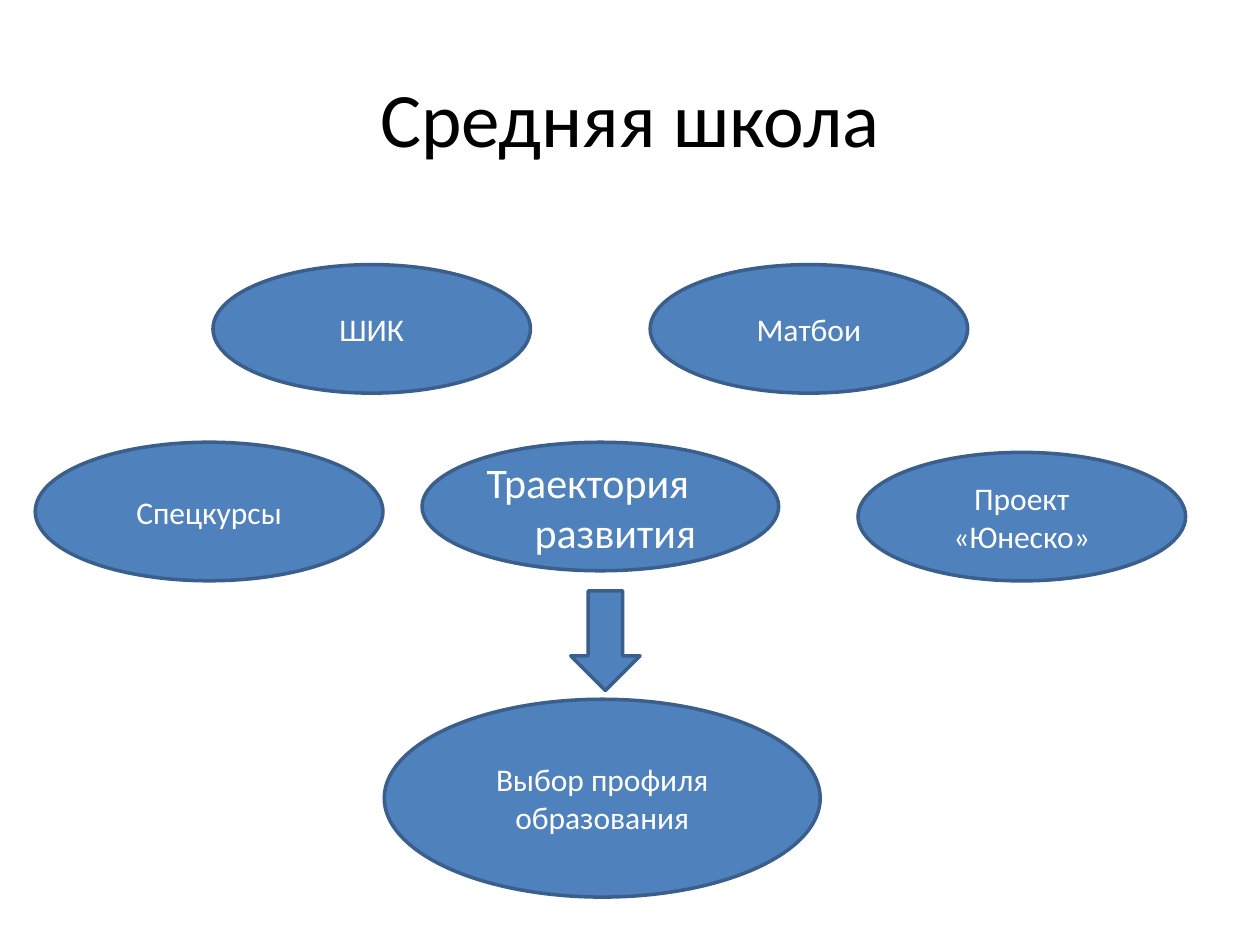
import pptx
import pptx.util
import pptx.dml.color
import pptx.enum.shapes
import pptx.enum.text

Inches = pptx.util.Inches
Pt = pptx.util.Pt
SHAPE = pptx.enum.shapes.MSO_SHAPE
ALIGN = pptx.enum.text.PP_ALIGN
MIDDLE = pptx.enum.text.MSO_ANCHOR.MIDDLE

COLORS = {"title": "000000", "fill": "4F81BD", "outline": "3A5F8C", "label": "FFFFFF"}
FONT = "Calibri"
ACTIVITIES = [
    ("Спецкурсы", (0.28, 3.51, 2.76, 1.1)),
    ("ШИК", (1.69, 2.1, 2.52, 1.02)),
    ("Матбои", (5.16, 2.1, 2.52, 1.02)),
    ("Проект «Юнеско»", (6.81, 3.59, 2.6, 1.02)),
]


def color(key):
    return pptx.dml.color.RGBColor.from_string(COLORS[key])


def write(frame, text, size, color_key, align=ALIGN.CENTER):
    frame.text = text
    frame.word_wrap = True
    frame.vertical_anchor = MIDDLE
    paragraph = frame.paragraphs[0]
    paragraph.alignment = align
    font = paragraph.runs[0].font
    font.name = FONT
    font.size = Pt(size)
    font.color.rgb = color(color_key)
    return paragraph


def add_title(slide, box):
    title = slide.shapes.title
    title.left, title.top, title.width, title.height = map(Inches, box)
    write(title.text_frame, "Средняя школа", 44, "title")


def add_figure(slide, preset, box):
    figure = slide.shapes.add_shape(preset, *map(Inches, box))
    figure.shadow.inherit = False
    figure.fill.solid()
    figure.fill.fore_color.rgb = color("fill")
    figure.line.color.rgb = color("outline")
    figure.line.width = Pt(2)
    return figure


def add_oval(slide, text, box, size=18, align=ALIGN.CENTER):
    oval = add_figure(slide, SHAPE.OVAL, box)
    return write(oval.text_frame, text, size, "label", align)


def add_trajectory(slide, box):
    trajectory = add_oval(slide, "Траектория развития", box, 24, ALIGN.JUSTIFY)
    trajectory.space_before = Pt(4.8)
    hanging = Inches(0.38)
    properties = trajectory._p.get_or_add_pPr()
    properties.set("marL", str(hanging))
    properties.set("indent", str(-hanging))


def main():
    presentation = pptx.Presentation()
    presentation.slide_width = Inches(10)
    presentation.slide_height = Inches(7.5)
    slide = presentation.slides.add_slide(presentation.slide_layouts[5])
    add_title(slide, (0.5, 0.3, 9, 1.25))
    add_trajectory(slide, (3.35, 3.51, 2.83, 1.02))
    for activity, box in ACTIVITIES:
        add_oval(slide, activity, box)
    add_figure(slide, SHAPE.DOWN_ARROW, (4.53, 4.69, 0.55, 0.79))
    add_oval(slide, "Выбор профиля образования", (3.05, 5.55, 3.46, 1.57))
    presentation.save("out.pptx")


if __name__ == "__main__":
    main()
